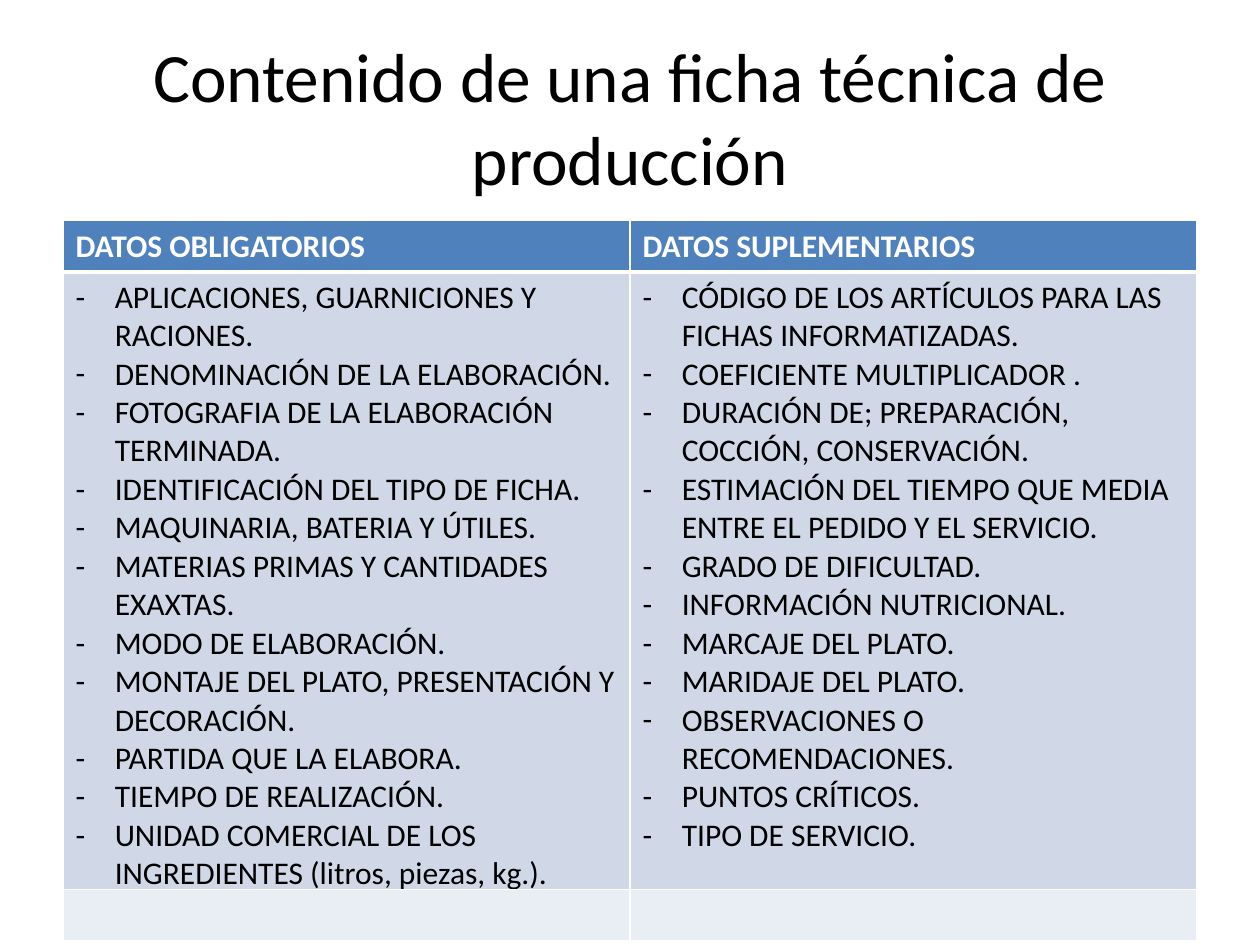
from lxml.etree import SubElement
from pptx import Presentation
from pptx.dml.color import RGBColor
from pptx.enum.text import MSO_ANCHOR as ANCHOR, PP_ALIGN as ALIGN
from pptx.oxml.ns import qn
from pptx.util import Cm, Pt

HEADERS = ["DATOS OBLIGATORIOS", "DATOS SUPLEMENTARIOS"]
LISTS = [
    [
        "APLICACIONES, GUARNICIONES Y RACIONES.",
        "DENOMINACIÓN DE LA ELABORACIÓN.",
        "FOTOGRAFIA DE LA ELABORACIÓN TERMINADA.",
        "IDENTIFICACIÓN DEL TIPO DE FICHA.",
        "MAQUINARIA, BATERIA Y ÚTILES.",
        "MATERIAS PRIMAS Y CANTIDADES EXAXTAS.",
        "MODO DE ELABORACIÓN.",
        "MONTAJE DEL PLATO, PRESENTACIÓN Y DECORACIÓN.",
        "PARTIDA QUE LA ELABORA.",
        "TIEMPO DE REALIZACIÓN.",
        "UNIDAD COMERCIAL DE LOS INGREDIENTES (litros, piezas, kg.).",
    ],
    [
        "CÓDIGO DE LOS ARTÍCULOS PARA LAS FICHAS INFORMATIZADAS.",
        "COEFICIENTE MULTIPLICADOR .",
        "DURACIÓN DE; PREPARACIÓN, COCCIÓN, CONSERVACIÓN.",
        "ESTIMACIÓN DEL TIEMPO QUE MEDIA ENTRE EL PEDIDO Y EL SERVICIO.",
        "GRADO DE DIFICULTAD.",
        "INFORMACIÓN NUTRICIONAL.",
        "MARCAJE DEL PLATO.",
        "MARIDAJE DEL PLATO.",
        "OBSERVACIONES O RECOMENDACIONES.",
        "PUNTOS CRÍTICOS.",
        "TIPO DE SERVICIO.",
    ],
]
TITLE = {"size": Pt(39.6), "name": "Calibri", "bold": False}
HEAD = {"size": Pt(18), "name": "Calibri", "bold": True}
BODY = {"size": Pt(18), "name": "Calibri", "bold": False}


def write(p, text, fmt, color):
    r = p.add_run()
    r.text = text
    for key, value in fmt.items():
        setattr(r.font, key, value)
    r.font.color.rgb = RGBColor.from_string(color)


def add_border(cell, side, width):
    """Draw a white line on one side; call before the cell gets its fill."""
    ln = SubElement(cell._tc.get_or_add_tcPr(), qn(f"a:ln{side}"), w=str(Pt(width)))
    fill = SubElement(ln, qn("a:solidFill"))
    SubElement(fill, qn("a:srgbClr"), val="FFFFFF")


prs = Presentation()
prs.slide_width, prs.slide_height = Cm(25.4), Cm(19.05)
slide = prs.slides.add_slide(prs.slide_layouts[6])

tf = slide.shapes.add_textbox(Cm(1.27), Cm(0.76), Cm(22.86), Cm(3.18)).text_frame
tf.word_wrap = True
tf.vertical_anchor = ANCHOR.MIDDLE
p = tf.paragraphs[0]
p.alignment = ALIGN.CENTER
write(p, "Contenido de una ficha técnica de producción", TITLE, "000000")

table = slide.shapes.add_table(3, 2, Cm(1.27), Cm(4.45), Cm(22.86), Cm(14.5)).table
for row, height, color in zip(table.rows, (1.03, 12.44, 1.03), ("4F81BD", "D0D8E8", "E9EDF4")):
    row.height = Cm(height)
    for cell in row.cells:
        is_header = color == "4F81BD"
        for side in "LRTB":
            add_border(cell, side, 3 if is_header and side == "B" else 1)
        cell.fill.solid()
        cell.fill.fore_color.rgb = RGBColor.from_string(color)

for col, (header, items) in enumerate(zip(HEADERS, LISTS)):
    write(table.cell(0, col).text_frame.paragraphs[0], header, HEAD, "FFFFFF")
    tf = table.cell(1, col).text_frame
    for i, item in enumerate(items):
        p = tf.add_paragraph() if i else tf.paragraphs[0]
        pPr = p._p.get_or_add_pPr()
        pPr.set("marL", str(Cm(0.79)))
        pPr.set("indent", str(-Cm(0.79)))
        SubElement(pPr, qn("a:buFont"), typeface="Calibri")
        SubElement(pPr, qn("a:buChar"), char="-")
        write(p, item, BODY, "000000")

prs.save("out.pptx")
